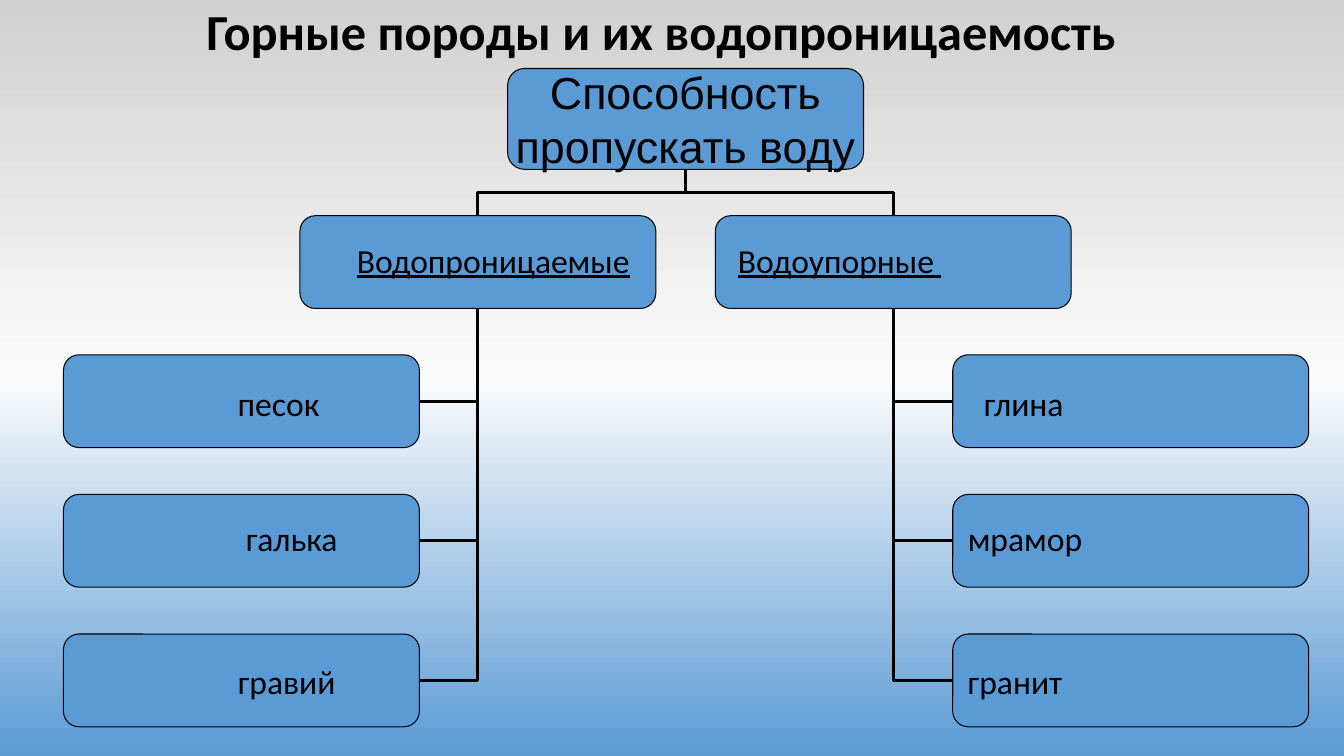
from copy import deepcopy
from dataclasses import dataclass

from lxml import etree
from pptx import Presentation
from pptx.dml.color import RGBColor
from pptx.enum.shapes import MSO_CONNECTOR, MSO_SHAPE
from pptx.enum.text import MSO_ANCHOR, PP_ALIGN
from pptx.oxml.ns import qn
from pptx.util import Inches, Pt

ROUNDED = MSO_SHAPE.ROUNDED_RECTANGLE
ELBOW = MSO_CONNECTOR.ELBOW
CENTER = PP_ALIGN.CENTER
MIDDLE = MSO_ANCHOR.MIDDLE
LEFT_SIDE, BOTTOM, RIGHT_SIDE = 1, 2, 3


# Content: each label is (text, left, width)
TITLE = "Горные породы и их водопроницаемость"
ROOT = ["Способность", "пропускать воду"]
BRANCHES = [
    {"label": ("Водопроницаемые", 3.44, 3.15), "center": 4.74, "leaf_left": 0.63,
     "leaf_side": RIGHT_SIDE,
     "rocks": [("песок", 2.26, 1.73), ("галька", 2.34, 1.57), ("гравий", 2.26, 1.65)]},
    {"label": ("Водоупорные ", 7.22, 2.76), "center": 8.86, "leaf_left": 9.45,
     "leaf_side": LEFT_SIDE,
     "rocks": [("глина", 9.66, 1.42), ("мрамор", 9.5, 1.65), ("гранит", 9.5, 1.5)]},
]

# Layout in inches
BOX_W, BOX_H = 3.53, 0.92
ROOT_CENTER, ROOT_TOP, ROOT_H = 6.8, 0.68, 1
BRANCH_TOP, BRANCH_LABEL_TOP = 2.14, 2.33
LEAF_TOP, LEAF_STEP = 3.52, 1.385
LEAF_LABEL_TOPS = [3.75, 5.09, 6.51]
LABEL_H = 0.5


@dataclass(frozen=True)
class Theme:
    box: RGBColor = RGBColor(0x5B, 0x9B, 0xD5)
    ink: RGBColor = RGBColor(0, 0, 0)
    background: tuple = ((0, "5B9BD5"), (0.5, "FBFBFB"), (1, "D1D1D1"))
    text_font: str = "Calibri"
    root_font: str = "Arial"
    title_size: int = 36
    root_size: int = 32
    label_size: int = 24
    box_line: float = 0.75
    connector_line: float = 2.25


THEME = Theme()


def style(paragraph, name, size, bold=False, underline=False):
    font = paragraph.font
    font.name, font.size = name, Pt(size)
    font.bold, font.underline = bold, underline
    font.color.rgb = THEME.ink


def add_box(slide, left, top, height=BOX_H):
    box = slide.shapes.add_shape(ROUNDED, Inches(left), Inches(top),
                                 Inches(BOX_W), Inches(height))
    box.shadow.inherit = False
    box.fill.solid()
    box.fill.fore_color.rgb = THEME.box
    box.line.color.rgb = THEME.ink
    box.line.width = Pt(THEME.box_line)
    return box


def add_label(slide, label, top, underline=False):
    text, left, width = label
    frame = slide.shapes.add_textbox(Inches(left), Inches(top), Inches(width),
                                     Inches(LABEL_H)).text_frame
    frame.word_wrap = True
    frame.text = text
    style(frame.paragraphs[0], THEME.text_font, THEME.label_size, underline=underline)


def add_elbow(slide, x1, y1, x2, y2):
    elbow = slide.shapes.add_connector(ELBOW, Inches(x1), Inches(y1), Inches(x2), Inches(y2))
    elbow.line.color.rgb = THEME.ink
    elbow.line.width = Pt(THEME.connector_line)
    etree.SubElement(elbow._element.spPr, qn("a:effectLst"))
    return elbow


def join_branch_to_root(slide, center):
    """A vertical-first elbow is a horizontal-first one turned by a right angle."""
    root_bottom = ROOT_TOP + ROOT_H
    mid_x, mid_y = (center + ROOT_CENTER) / 2, (BRANCH_TOP + root_bottom) / 2
    half_run, half_drop = abs(center - ROOT_CENTER) / 2, (BRANCH_TOP - root_bottom) / 2
    side = 1 if center > ROOT_CENTER else -1
    elbow = add_elbow(slide, mid_x - side * half_drop, mid_y + half_run,
                      mid_x + side * half_drop, mid_y - half_run)
    turn = 270 if side > 0 else 90
    elbow._element.spPr.find(qn("a:xfrm")).set("rot", str(turn * 60000))


def join_leaf_to_branch(slide, leaf, leaf_side, branch):
    elbow = add_elbow(slide, 0, 0, 1, 1)
    elbow._element.spPr.find(qn("a:prstGeom")).set("prst", "bentConnector2")
    elbow.begin_connect(leaf, leaf_side)
    elbow.end_connect(branch, BOTTOM)


def paint_background(slide):
    fill = slide.background.fill
    fill.gradient()
    fill.gradient_angle = 90
    stop_list = slide.background._cSld.find(".//" + qn("a:gsLst"))
    stop_list.append(deepcopy(stop_list[0]))
    for stop, (position, color) in zip(fill.gradient_stops, THEME.background):
        stop.position = position
        stop.color.rgb = RGBColor.from_string(color)


def add_title(slide):
    title = slide.shapes.title
    title.left, title.top = Inches(1.23), Inches(0)
    title.width, title.height = Inches(10.43), Inches(0.68)
    frame = title.text_frame
    frame.text = TITLE
    frame.vertical_anchor = MIDDLE
    frame.margin_left = Inches(0.33)
    heading = frame.paragraphs[0]
    heading.alignment, heading.line_spacing = CENTER, 0.9
    style(heading, THEME.text_font, THEME.title_size, bold=True)


def add_root(slide):
    frame = add_box(slide, ROOT_CENTER - BOX_W / 2, ROOT_TOP, ROOT_H).text_frame
    frame.margin_left = frame.margin_right = frame.margin_top = frame.margin_bottom = 0
    frame.word_wrap = False
    frame.vertical_anchor = MIDDLE
    frame.text = "\n".join(ROOT)
    for line in frame.paragraphs:
        line.alignment = CENTER
        style(line, THEME.root_font, THEME.root_size)


def add_branch(slide, branch):
    center = branch["center"]
    branch_box = add_box(slide, center - BOX_W / 2, BRANCH_TOP)
    add_label(slide, branch["label"], BRANCH_LABEL_TOP, underline=True)
    join_branch_to_root(slide, center)
    for row, (rock, label_top) in enumerate(zip(branch["rocks"], LEAF_LABEL_TOPS)):
        leaf_box = add_box(slide, branch["leaf_left"], LEAF_TOP + row * LEAF_STEP)
        add_label(slide, rock, label_top)
        join_leaf_to_branch(slide, leaf_box, branch["leaf_side"], branch_box)


def main():
    deck = Presentation()
    deck.slide_width, deck.slide_height = Inches(13.33), Inches(7.5)
    slide = deck.slides.add_slide(deck.slide_layouts[5])
    paint_background(slide)
    add_title(slide)
    add_root(slide)
    for branch in BRANCHES:
        add_branch(slide, branch)
    deck.save("out.pptx")


if __name__ == "__main__":
    main()
